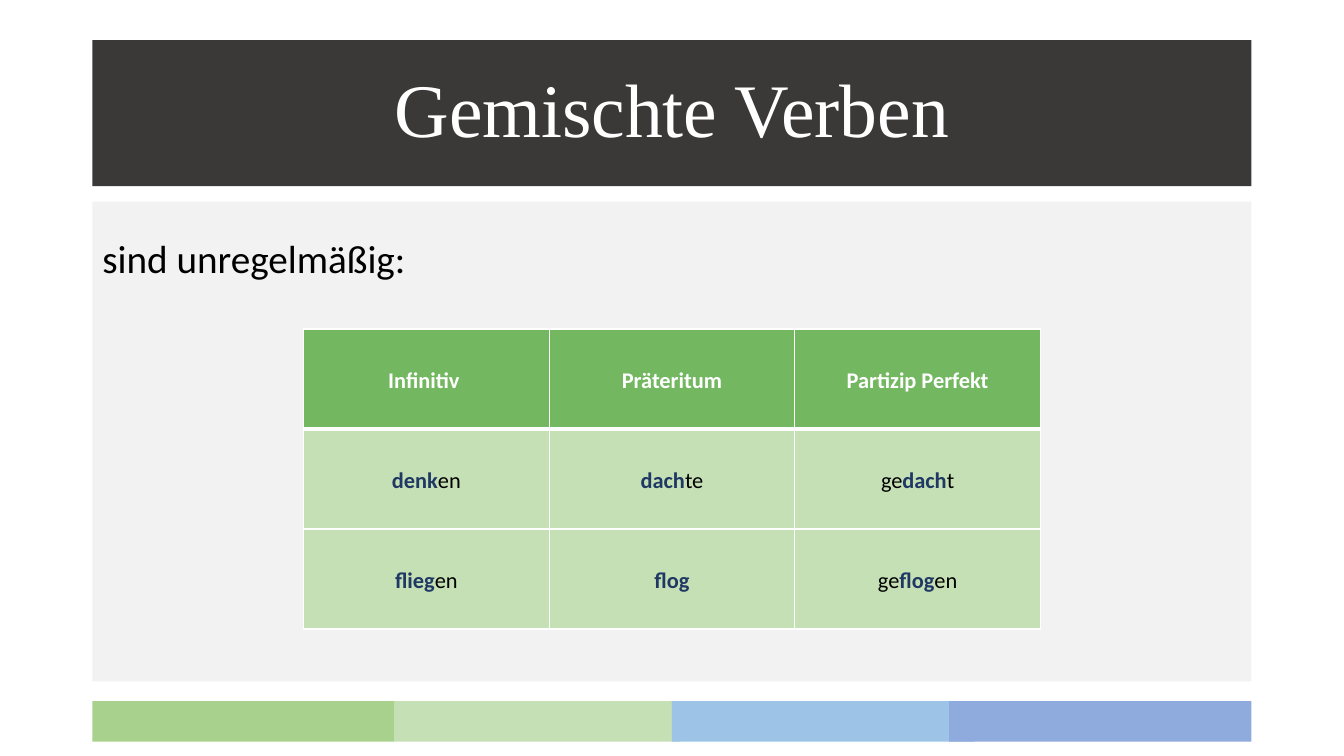
import pptx
import pptx.dml.color
import pptx.enum.shapes
import pptx.enum.text
import pptx.util
from lxml import etree
from pptx.oxml.ns import qn

Cm = pptx.util.Cm
Pt = pptx.util.Pt
RGBColor = pptx.dml.color.RGBColor
Align = pptx.enum.text.PP_ALIGN
Anchor = pptx.enum.text.MSO_ANCHOR

WHITE = RGBColor(0xFF, 0xFF, 0xFF)
BLACK = RGBColor(0x00, 0x00, 0x00)
CHARCOAL = RGBColor(0x3B, 0x38, 0x38)
PALE_GREY = RGBColor(0xF2, 0xF2, 0xF2)
HEADER_GREEN = RGBColor(0x73, 0xB7, 0x61)
GREEN = RGBColor(0xA9, 0xD1, 0x8E)
LIGHT_GREEN = RGBColor(0xC5, 0xE0, 0xB4)
LIGHT_BLUE = RGBColor(0x9D, 0xC3, 0xE6)
BLUE = RGBColor(0x8F, 0xAA, 0xDC)
STEM_NAVY = RGBColor(0x20, 0x38, 0x64)

LEFT, WIDTH = 2.33, 29.21
FOOTER_TOP, FOOTER_HEIGHT = 17.67, 1.02
FOOTER_BANDS = [
    (9.95, 7.2, LIGHT_GREEN),
    (16.93, 7.62, LIGHT_BLUE),
    (LEFT, 7.62, GREEN),
    (23.92, 7.62, BLUE),
]

# Asterisks enclose the verb stem.
VERB_ROWS = [
    ["Infinitiv ", "Präteritum", "Partizip Perfekt"],
    ["*denk*en", "*dach*te", "ge*dach*t"],
    ["*flieg*en", "*flog*", "ge*flog*en"],
]


def write(paragraph, text, *, size, color, font="Calibri", bold=False,
          align=Align.CENTER, spacing=0.9):
    """Fill a paragraph; parts between asterisks become bold and navy."""
    paragraph.alignment = align
    paragraph.line_spacing = spacing
    for index, part in enumerate(text.split("*")):
        if not part:
            continue
        is_stem = index % 2 == 1
        run = paragraph.add_run()
        run.text = part
        run.font.name = font
        run.font.size = Pt(size)
        run.font.bold = bold or is_stem
        run.font.color.rgb = STEM_NAVY if is_stem else color


def set_borders(cell, bottom_width):
    """Draw white borders, 1 pt except for the bottom one."""
    properties = cell._tc.get_or_add_tcPr()
    for index, (side, width) in enumerate(
            [("L", 1), ("R", 1), ("T", 1), ("B", bottom_width)]):
        line = etree.Element(qn(f"a:ln{side}"), w=str(Pt(width)))
        fill = etree.SubElement(line, qn("a:solidFill"))
        etree.SubElement(fill, qn("a:srgbClr"), val=str(WHITE))
        properties.insert(index, line)


class SlideBuilder:
    def __init__(self, slide):
        self.slide = slide

    def rectangle(self, left, top, width, height, fill_color):
        shape = self.slide.shapes.add_shape(
            pptx.enum.shapes.MSO_SHAPE.RECTANGLE,
            Cm(left), Cm(top), Cm(width), Cm(height))
        shape.shadow.inherit = False
        shape.fill.solid()
        shape.fill.fore_color.rgb = fill_color
        shape.line.fill.background()
        return shape

    def panel(self, top, height, fill_color, text, anchor, inset_top=0.13,
              **text_format):
        shape = self.rectangle(LEFT, top, WIDTH, height, fill_color)
        frame = shape.text_frame
        frame.word_wrap = True
        frame.vertical_anchor = anchor
        frame.margin_top = Cm(inset_top)
        write(frame.paragraphs[0], text, **text_format)

    def table(self, left, top, column_width, row_height, rows):
        columns = len(rows[0])
        table = self.slide.shapes.add_table(
            len(rows), columns, Cm(left), Cm(top),
            Cm(column_width * columns), Cm(row_height * len(rows))).table
        for column in table.columns:
            column.width = Cm(column_width)
        for row_index, texts in enumerate(rows):
            table.rows[row_index].height = Cm(row_height)
            for column_index, text in enumerate(texts):
                self.cell(table.cell(row_index, column_index), text,
                          is_header=row_index == 0)

    def cell(self, cell, text, is_header):
        cell.fill.solid()
        cell.fill.fore_color.rgb = HEADER_GREEN if is_header else LIGHT_GREEN
        cell.vertical_anchor = Anchor.MIDDLE
        cell.margin_left = cell.margin_right = Cm(0.18)
        cell.margin_top = cell.margin_bottom = 0
        set_borders(cell, bottom_width=3 if is_header else 1)
        write(cell.text_frame.paragraphs[0], text, size=16, bold=is_header,
              color=WHITE if is_header else BLACK, spacing=1.15)


def main():
    presentation = pptx.Presentation()
    presentation.slide_width = Cm(33.87)
    presentation.slide_height = Cm(19.05)
    builder = SlideBuilder(
        presentation.slides.add_slide(presentation.slide_layouts[6]))

    for left, width, color in FOOTER_BANDS:
        builder.rectangle(left, FOOTER_TOP, width, FOOTER_HEIGHT, color)
    builder.panel(1.01, 3.68, CHARCOAL, "Gemischte Verben", Anchor.MIDDLE,
                  size=54, color=WHITE, font="Times New Roman")
    builder.panel(5.08, 12.09, PALE_GREY, "sind unregelmäßig:", Anchor.TOP,
                  inset_top=0.97, size=28, color=BLACK, align=Align.LEFT)
    builder.table(7.65, 8.29, 6.19, 2.52, VERB_ROWS)

    presentation.save("out.pptx")


if __name__ == "__main__":
    main()
